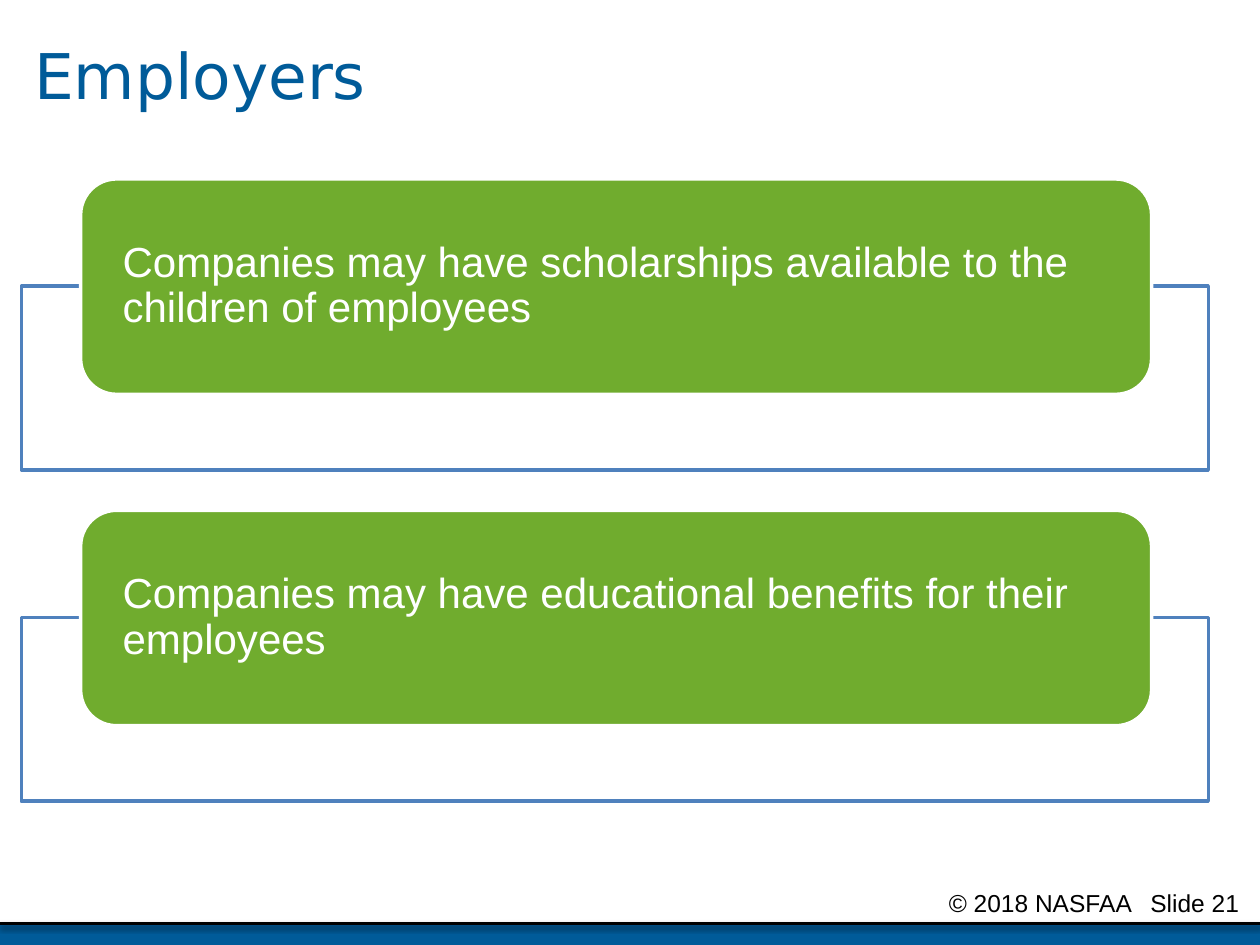
from dataclasses import dataclass

from lxml import etree
from pptx import Presentation
from pptx.dml.color import RGBColor
from pptx.enum.shapes import MSO_CONNECTOR, MSO_SHAPE
from pptx.enum.text import MSO_ANCHOR, PP_ALIGN
from pptx.oxml import parse_xml
from pptx.oxml.ns import nsdecls, qn
from pptx.util import Inches, Pt

RECTANGLE = MSO_SHAPE.RECTANGLE
ROUNDED = MSO_SHAPE.ROUNDED_RECTANGLE
STRAIGHT = MSO_CONNECTOR.STRAIGHT
MIDDLE = MSO_ANCHOR.MIDDLE
LEFT = PP_ALIGN.LEFT

BLUE, GREEN, FRAME_BLUE = "005B99", "70AC2E", "4F81BD"
WHITE, BLACK = "FFFFFF", "000000"
FIRST_CARD_TOP, CARD_STEP, FRAME_OFFSET = 1.42, 2.63, 0.85
FOOTER_TOP = 7.33


@dataclass
class Box:
    left: float
    top: float
    width: float
    height: float

    def lengths(self) -> tuple:
        return tuple(Inches(v) for v in (self.left, self.top, self.width, self.height))


def color(value: str) -> RGBColor:
    return RGBColor.from_string(value)


def format_text(paragraph, font_name: str, size: int, font_color: str) -> None:
    paragraph.alignment = LEFT
    for run in paragraph.runs:
        run.font.name = font_name
        run.font.size = Pt(size)
        run.font.color.rgb = color(font_color)


def add_box(slide, kind, box: Box, fill: str, line: str | None = None):
    shape = slide.shapes.add_shape(kind, *box.lengths())
    shape.shadow.inherit = False
    shape.fill.solid()
    shape.fill.fore_color.rgb = color(fill)
    if line is None:
        shape.line.fill.background()
    else:
        shape.line.color.rgb = color(line)
        shape.line.width = Pt(2)
    return shape


def add_title(slide, text: str) -> None:
    title = slide.shapes.title
    title.left, title.top, title.width, title.height = Box(0.17, 0, 9.67, 1.25).lengths()
    title.text_frame.text = text
    title.text_frame.vertical_anchor = MIDDLE
    paragraph = title.text_frame.paragraphs[0]
    paragraph.line_spacing = 0.9
    format_text(paragraph, "DejaVu Sans", 36, BLUE)


def add_card(slide, top: float, text: str) -> None:
    frame = add_box(slide, RECTANGLE, Box(0.17, top + FRAME_OFFSET, 9.42, 1.46), WHITE, FRAME_BLUE)
    fill_color = frame.fill._xPr.find(qn("a:solidFill"))[0]
    etree.SubElement(fill_color, qn("a:alpha"), val="90000")

    card = add_box(slide, ROUNDED, Box(0.64, top, 8.5, 1.71), GREEN, WHITE)
    text_frame = card.text_frame
    text_frame.word_wrap = True
    text_frame.vertical_anchor = MIDDLE
    text_frame.margin_left = text_frame.margin_right = Inches(0.25)
    text_frame.margin_top = text_frame.margin_bottom = 0
    text_frame.text = text
    paragraph = text_frame.paragraphs[0]
    paragraph.line_spacing = 0.9
    format_text(paragraph, "Arial", 24, WHITE)


def add_footer(slide, text: str) -> None:
    add_box(slide, RECTANGLE, Box(0, FOOTER_TOP, 10, 0.17), BLUE)
    rule = slide.shapes.add_connector(
        STRAIGHT, 0, Inches(FOOTER_TOP), Inches(10), Inches(FOOTER_TOP)
    )
    rule.line.color.rgb = color(BLACK)
    rule.line.width = Pt(2)
    rule._element.spPr.append(parse_xml(
        f'<a:effectLst {nsdecls("a")}>'
        f'<a:outerShdw blurRad="{Pt(3.1)}" dist="{Pt(1.6)}" dir="5400000" rotWithShape="0">'
        f'<a:srgbClr val="{BLACK}"><a:alpha val="38000"/></a:srgbClr>'
        '</a:outerShdw></a:effectLst>'
    ))

    label = slide.shapes.add_textbox(*Box(6.25, 7, 3.75, 0.25).lengths())
    text_frame = label.text_frame
    text_frame.word_wrap = True
    text_frame.margin_left = Inches(1.28)
    text_frame.text = text
    paragraph = text_frame.paragraphs[0]
    tabs = etree.SubElement(paragraph._p.get_or_add_pPr(), qn("a:tabLst"))
    etree.SubElement(tabs, qn("a:tab"), pos=str(Inches(1.6)), algn="l")
    format_text(paragraph, "Arial", 14, BLACK)


def main() -> None:
    presentation = Presentation()
    presentation.slide_width = Inches(10)
    presentation.slide_height = Inches(7.5)
    slide = presentation.slides.add_slide(presentation.slide_layouts.get_by_name("Title Only"))

    add_footer(slide, "© 2018 NASFAA\tSlide 21")
    add_title(slide, "Employers")
    messages = (
        "Companies may have scholarships available to the children of employees",
        "Companies may have educational benefits for their employees",
    )
    for index, message in enumerate(messages):
        add_card(slide, FIRST_CARD_TOP + index * CARD_STEP, message)

    presentation.save("out.pptx")


if __name__ == "__main__":
    main()
